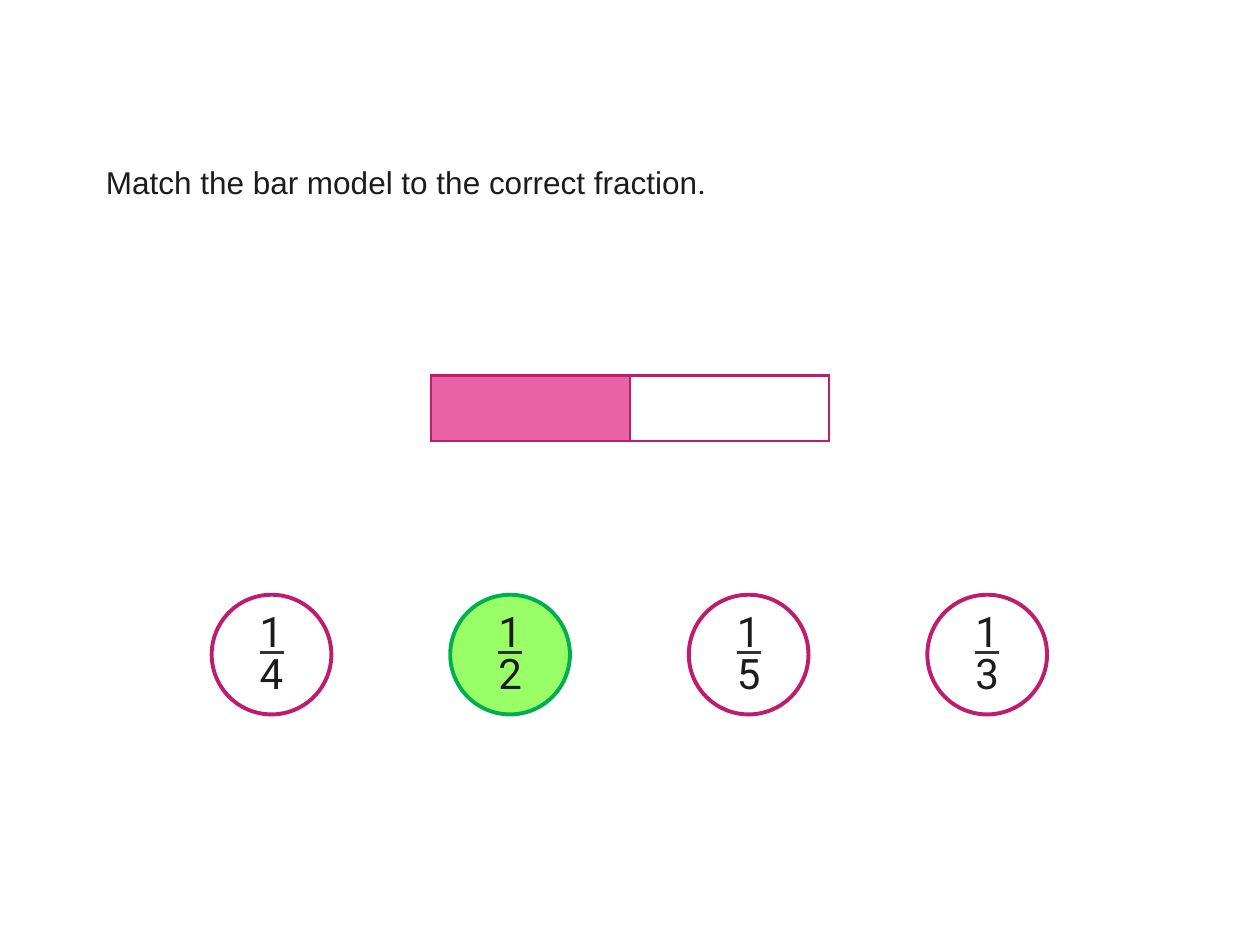
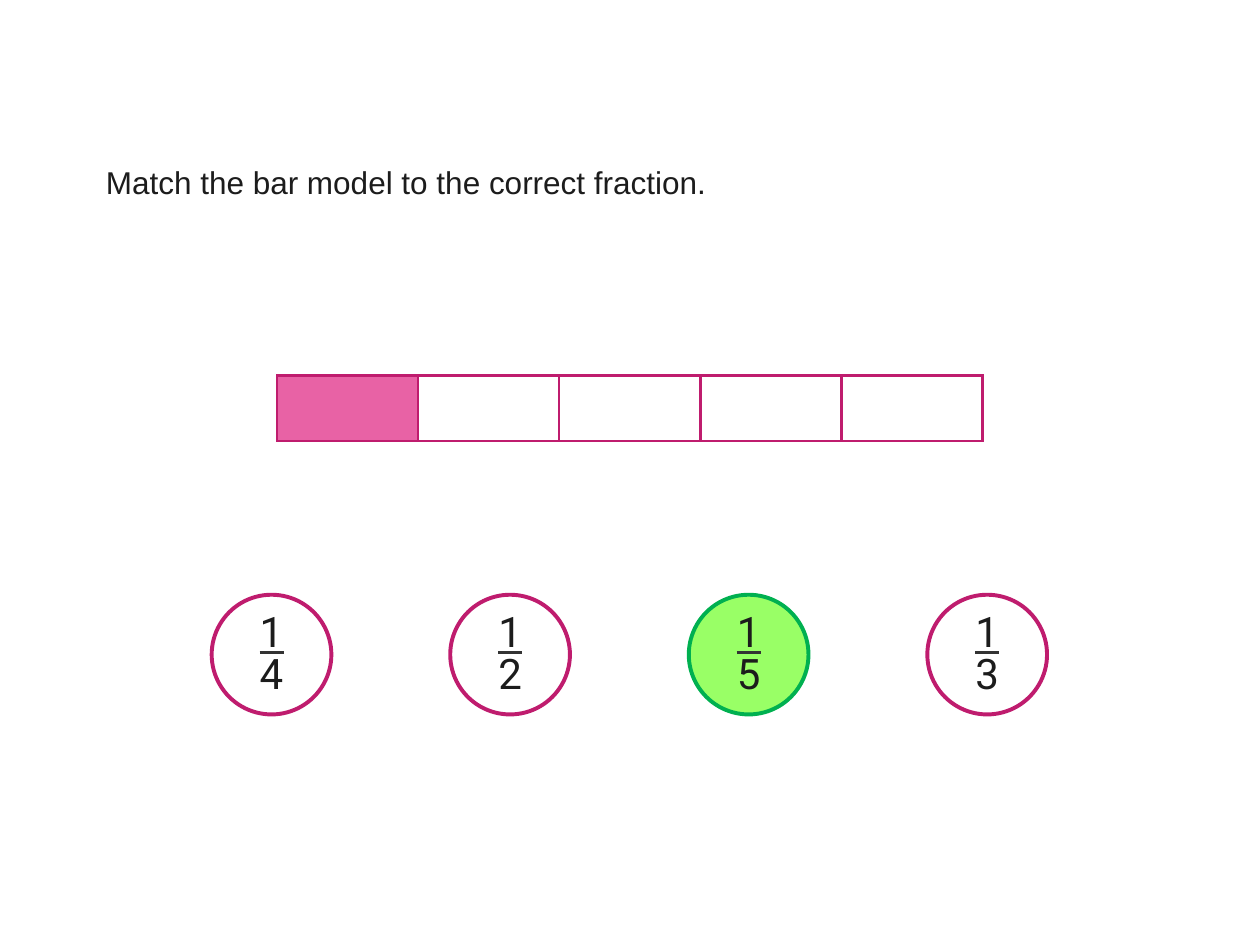
from collections import namedtuple

from lxml import etree
from pptx import Presentation
from pptx.dml.color import RGBColor
from pptx.enum import shapes, text
from pptx.oxml import ns
from pptx.util import Emu, Inches, Pt

COLUMN = ROW = Inches(0.25)  # the slide is a grid of 40 columns and 30 rows
COLUMNS, ROWS = 40, 30

INK, RULE, WHITE = "1C1C1C", "333333", "FFFFFF"
PINK, MAGENTA = "E862A5", "BF1C6E"
LIME, GREEN = "99FF66", "00B050"

DENOMINATORS = ("4", "2", "5", "3")
QUESTION = "Match the bar model to the correct fraction"

Box = namedtuple("Box", "left top width height")


def grid(left, top, width, height):
    return Box(*(Emu(round(size * unit)) for size, unit in
                 zip((left, top, width, height), (COLUMN, ROW) * 2)))


def share(box, left, top, width, height):
    """The part of a box given as shares of its width and height."""
    return Box(Emu(round(box.left + left * box.width)),
               Emu(round(box.top + top * box.height)),
               Emu(round(width * box.width)), Emu(round(height * box.height)))


def colour(value):
    return RGBColor.from_string(value)


def add_text(parent, box):
    frame = parent.shapes.add_textbox(*box).text_frame
    frame.word_wrap = True
    frame.margin_left = frame.margin_right = 0
    frame.margin_top = frame.margin_bottom = 0
    return frame


def add_span(para, words, font, size):
    span = para.add_run()
    span.text = words
    span.font.name, span.font.size = font, Pt(size)
    span.font.color.rgb = colour(INK)


def add_question(page, box, stop_font):
    para = add_text(page, box).paragraphs[0]
    add_span(para, QUESTION, "Arial", 18)
    add_span(para, ".", stop_font, 18)


def add_borders(cell, line_colour, points):
    properties = cell._tc.get_or_add_tcPr()
    for side in "LRTB":
        line = etree.SubElement(properties, ns.qn("a:ln" + side), w=str(Pt(points)))
        fill = etree.SubElement(line, ns.qn("a:solidFill"))
        etree.SubElement(fill, ns.qn("a:srgbClr"), val=line_colour)


def add_bar_model(page, box, parts):
    """A bar of equal parts with the first one shaded."""
    table = page.shapes.add_table(1, parts, *box).table
    table.first_row = table.horz_banding = False
    for index, column in enumerate(table.columns):
        column.width = Emu(box.width // parts)
        cell = table.cell(0, index)
        add_borders(cell, MAGENTA, 1.5)
        cell.fill.solid()
        cell.fill.fore_color.rgb = colour(WHITE if index else PINK)


def add_fraction(page, box, denominator, correct):
    group = page.shapes.add_group_shape()
    circle = group.shapes.add_shape(shapes.MSO_SHAPE.OVAL, *box)
    circle.shadow.inherit = False
    circle.fill.solid()
    circle.fill.fore_color.rgb = colour(LIME if correct else WHITE)
    circle.line.color.rgb = colour(GREEN if correct else MAGENTA)
    circle.line.width = Pt(2.25)

    frame = add_text(group, share(box, 0.32, 0.16, 0.36, 0.7))
    for index, digit in enumerate(("1", denominator)):
        para = frame.add_paragraph() if index else frame.paragraphs[0]
        para.alignment = text.PP_ALIGN.CENTER
        para.line_spacing = Pt(24)
        add_span(para, digit, "Roboto", 24)

    rule = share(box, 0.4, 0.48, 0.2, 0)
    line = group.shapes.add_connector(shapes.MSO_CONNECTOR.STRAIGHT, rule.left,
                                      rule.top, rule.left + rule.width, rule.top)
    line.line.color.rgb = colour(RULE)
    line.line.width = Pt(1.75)
    etree.SubElement(line._element.spPr, ns.qn("a:effectLst"))


def add_answers(page, box, answer):
    """Circles as wide as the box is high, spread evenly across it."""
    step = (box.width - box.height) / (len(DENOMINATORS) - 1)
    for index, denominator in enumerate(DENOMINATORS):
        circle = Box(Emu(round(box.left + index * step)), box.top,
                     box.height, box.height)
        add_fraction(page, circle, denominator, denominator == answer)


def add_quiz(deck, parts, part_columns, stop_font):
    page = deck.slides.add_slide(deck.slide_layouts[6])
    bar_columns = parts * part_columns
    add_question(page, grid(3.36, 5.16, 21.4, 1.2), stop_font)
    add_bar_model(page, grid((COLUMNS - bar_columns) / 2, 11.92, bar_columns, 2.08), parts)
    add_answers(page, grid(6.72, 18.88, 26.52, 3.8), str(parts))


def main():
    deck = Presentation()
    deck.slide_width, deck.slide_height = COLUMNS * COLUMN, ROWS * ROW
    add_quiz(deck, parts=2, part_columns=6.32, stop_font="Roboto")
    add_quiz(deck, parts=5, part_columns=4.48, stop_font="Arial")
    deck.save("out.pptx")


if __name__ == "__main__":
    main()
